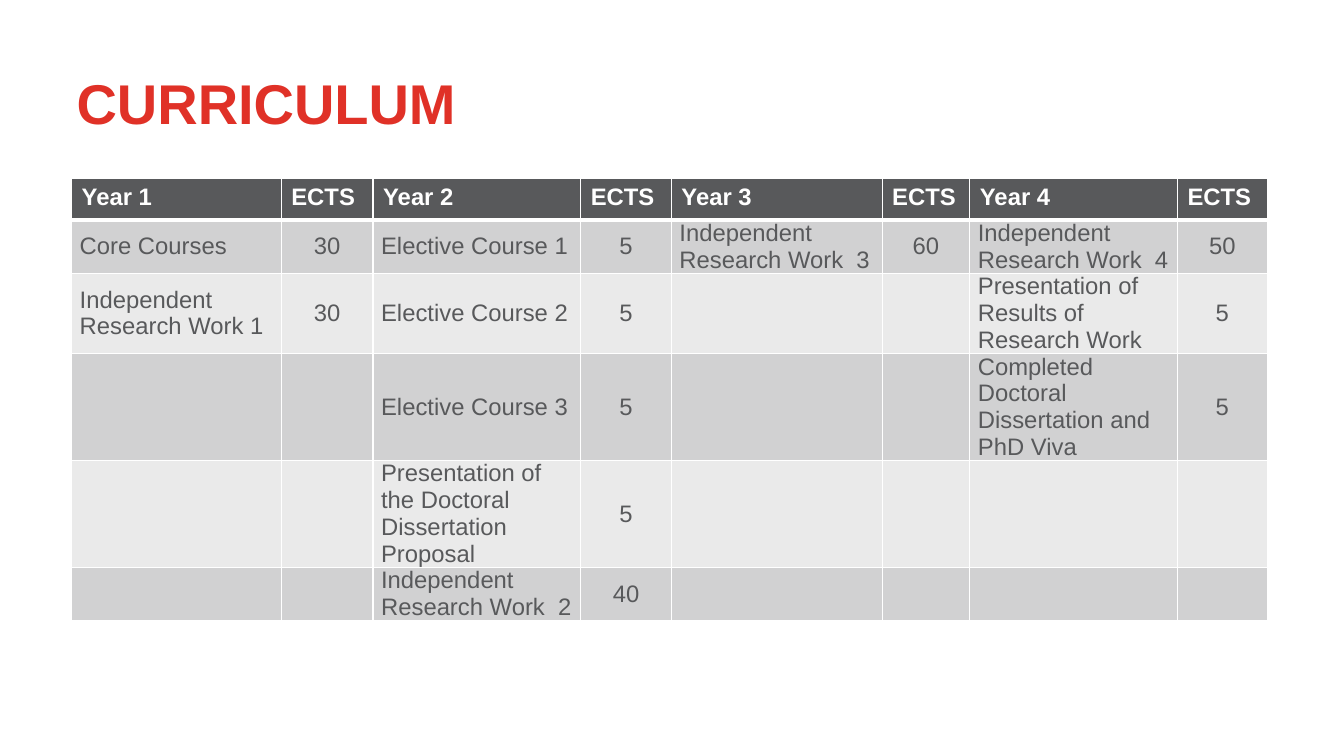
from dataclasses import dataclass

from lxml.etree import SubElement
from pptx import Presentation
from pptx.dml.color import RGBColor
from pptx.enum.text import MSO_ANCHOR, MSO_AUTO_SIZE, PP_ALIGN
from pptx.oxml.ns import qn
from pptx.table import _Cell
from pptx.text.text import Font
from pptx.util import Emu, Inches, Pt

COLORS = {"title": "E03127", "header": "58595B", "text": "58595B",
          "odd": "D1D1D2", "even": "EAEAEA", "white": "FFFFFF"}
WIDTH, HEIGHT = Inches(13.33), Inches(7.5)

# The slide is a grid of 100 columns by 100 rows
COLUMN_SPANS = [15.6, 6.83, 15.45, 6.75, 15.68, 6.53, 15.45, 6.68]
ROW_SPAN = 5.47

TITLE_FONT = {"name": "Arial", "size": Pt(40), "bold": True}
HEADER_FONT = {"name": "Arial", "size": Pt(17), "bold": True}
BODY_FONT = {"name": "Arial", "size": Pt(17), "bold": False}
BODY_CELL = {"margin_left": Inches(0.08), "margin_right": Inches(0.08),
             "margin_top": 0, "margin_bottom": 0,
             "vertical_anchor": MSO_ANCHOR.MIDDLE}


@dataclass
class Course:
    name: str
    ects: int


@dataclass
class Year:
    title: str
    courses: list[Course]


YEARS = [
    Year("Year 1", [Course("Core Courses", 30),
                    Course("Independent Research Work 1", 30)]),
    Year("Year 2", [Course("Elective Course 1", 5),
                    Course("Elective Course 2", 5),
                    Course("Elective Course 3", 5),
                    Course("Presentation of the Doctoral Dissertation Proposal", 5),
                    Course("Independent Research Work  2", 40)]),
    Year("Year 3", [Course("Independent Research Work  3", 60)]),
    Year("Year 4", [Course("Independent Research Work  4", 50),
                    Course("Presentation of Results of Research Work", 5),
                    Course("Completed Doctoral Dissertation and PhD Viva", 5)]),
]


def cols(n: float) -> Emu:
    return Emu(round(WIDTH * n / 100))


def rows(n: float) -> Emu:
    return Emu(round(HEIGHT * n / 100))


def apply(target: object, values: dict) -> None:
    for name, value in values.items():
        setattr(target, name, value)


def style_font(font: Font, values: dict, color: str) -> None:
    apply(font, values)
    font.color.rgb = RGBColor.from_string(COLORS[color])


def style_cell(cell: _Cell, fill: str, bottom: float) -> None:
    """Fill a cell and draw its white borders."""
    tcPr = cell._tc.get_or_add_tcPr()
    for side, width in {"L": 1, "R": 1, "T": 1, "B": bottom}.items():
        ln = SubElement(tcPr, qn(f"a:ln{side}"), w=str(Pt(width)))
        solid = SubElement(ln, qn("a:solidFill"))
        SubElement(solid, qn("a:srgbClr"), val=COLORS["white"])
    cell.fill.solid()
    cell.fill.fore_color.rgb = RGBColor.from_string(COLORS[fill])


def write_cell(cell: _Cell, text: str, font: dict, color: str) -> None:
    p = cell.text_frame.paragraphs[0]
    r = p.add_run()
    r.text = text
    style_font(r.font, font, color)


def write_course(name_cell: _Cell, ects_cell: _Cell, course: Course) -> None:
    for cell, text in ((name_cell, course.name), (ects_cell, str(course.ects))):
        apply(cell, BODY_CELL)
        write_cell(cell, text, BODY_FONT, "text")
    ects_cell.text_frame.paragraphs[0].alignment = PP_ALIGN.CENTER


def main() -> None:
    prs = Presentation()
    prs.slide_width, prs.slide_height = WIDTH, HEIGHT
    s = prs.slides.add_slide(prs.slide_layouts[5])

    # Title
    title = s.shapes.title
    apply(title, {"left": cols(5.7), "top": rows(10.13),
                  "width": cols(88.6), "height": rows(14.93)})
    tf = title.text_frame
    apply(tf, {"margin_left": 0, "margin_right": 0, "margin_top": 0,
               "margin_bottom": 0, "word_wrap": True,
               "auto_size": MSO_AUTO_SIZE.NONE,
               "vertical_anchor": MSO_ANCHOR.TOP})
    p = tf.paragraphs[0]
    apply(p, {"alignment": PP_ALIGN.LEFT, "line_spacing": 0.9})
    r = p.add_run()
    r.text = "CURRICULUM"
    style_font(r.font, TITLE_FONT, "title")

    # Table grid
    row_count = 1 + max(len(year.courses) for year in YEARS)
    table = s.shapes.add_table(
        row_count, len(COLUMN_SPANS), cols(5.33), rows(23.6),
        cols(sum(COLUMN_SPANS)), rows(ROW_SPAN * row_count)).table
    for column, span in zip(table.columns, COLUMN_SPANS):
        column.width = cols(span)
    for i, row in enumerate(table.rows):
        row.height = rows(ROW_SPAN)
        fill = "header" if i == 0 else "odd" if i % 2 else "even"
        for cell in row.cells:
            style_cell(cell, fill, bottom=1 if i else 3)

    # Years and their courses
    for k, year in enumerate(YEARS):
        for j, heading in enumerate((year.title, "ECTS")):
            write_cell(table.cell(0, 2 * k + j), heading, HEADER_FONT, "white")
        for i, course in enumerate(year.courses, start=1):
            write_course(table.cell(i, 2 * k), table.cell(i, 2 * k + 1), course)

    prs.save("out.pptx")


if __name__ == "__main__":
    main()
